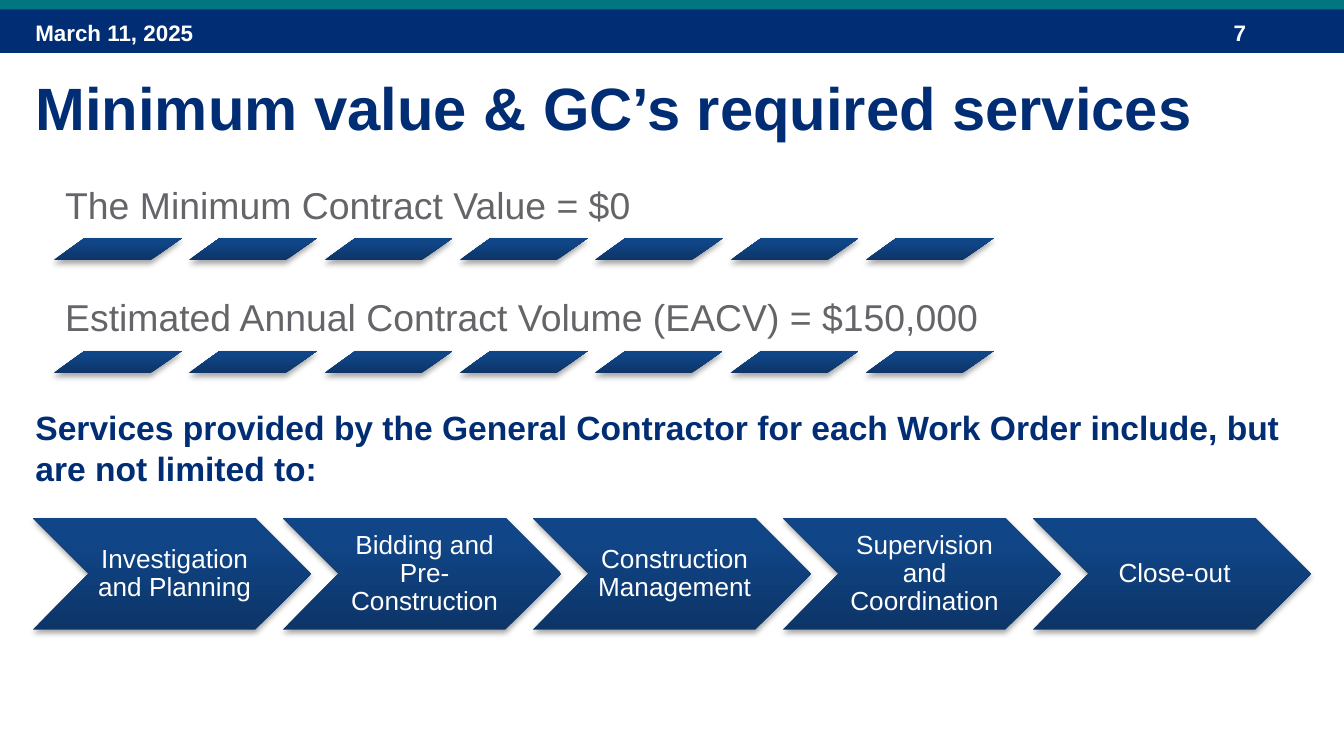
"""Build the slide on minimum value and the general contractor's required services."""
from copy import deepcopy
from dataclasses import dataclass
from typing import Any

import lxml.etree
import pptx
import pptx.dml.color
import pptx.enum.shapes
import pptx.enum.text
import pptx.oxml
import pptx.oxml.ns
import pptx.util

PX = 4572
SHAPES = pptx.enum.shapes.MSO_SHAPE
ANCHOR = pptx.enum.text.MSO_ANCHOR
ALIGN = pptx.enum.text.PP_ALIGN


@dataclass(frozen=True)
class Theme:
    font: str = "Arial"
    navy: str = "002D73"
    teal: str = "007681"
    grey: str = "646569"
    white: str = "FFFFFF"
    gradient: tuple = ((0, "0D3568"), (0.8, "104587"), (1, "0E458A"))
    title: int = 32
    value: int = 20
    intro: int = 18
    step: int = 14
    header: int = 12


@dataclass(frozen=True)
class Box:
    left: int
    top: int
    width: int
    height: int

    def emu(self) -> list[int]:
        return [v * PX for v in (self.left, self.top, self.width, self.height)]


@dataclass(frozen=True)
class ContractValue:
    text: str
    top: int


THEME = Theme()
VALUES = (
    ContractValue("The Minimum Contract Value = $0", 225),
    ContractValue("Estimated Annual Contract Volume (EACV) = $150,000", 393),
)
SERVICES = (
    "Investigation and Planning",
    "Bidding and Pre-Construction",
    "Construction Management",
    "Supervision and Coordination",
    "Close-out",
)
DASHES = 7
DASH_SPAN = 1208
SERVICE_PITCH = 372


def rgb(value: str) -> pptx.dml.color.RGBColor:
    return pptx.dml.color.RGBColor.from_string(value)


def write(target: Any, text: str, *, size: int, color: str, bold: bool = False,
          align: Any = ALIGN.LEFT, anchor: Any = ANCHOR.TOP, spacing: float = 1.0,
          insets: tuple = (20, 10, 20, 10), grow: bool = False) -> None:
    frame = target.text_frame
    frame.word_wrap = True
    frame.vertical_anchor = anchor
    auto = pptx.enum.text.MSO_AUTO_SIZE
    frame.auto_size = auto.SHAPE_TO_FIT_TEXT if grow else auto.NONE
    (frame.margin_left, frame.margin_top,
     frame.margin_right, frame.margin_bottom) = [v * PX for v in insets]
    frame.text = text
    paragraph = frame.paragraphs[0]
    paragraph.alignment = align
    paragraph.line_spacing = spacing
    font = paragraph.runs[0].font
    font.name = THEME.font
    font.size = pptx.util.Pt(size)
    font.bold = bold
    font.color.rgb = rgb(color)


def add_text(slide: Any, box: Box, text: str, **style: Any) -> None:
    write(slide.shapes.add_textbox(*box.emu()), text, **style)


def add_plain(slide: Any, kind: Any, box: Box) -> Any:
    shape = slide.shapes.add_shape(kind, *box.emu())
    shape.shadow.inherit = False
    shape.line.fill.background()
    return shape


def add_band(slide: Any, box: Box, color: str) -> None:
    band = add_plain(slide, SHAPES.RECTANGLE, box)
    band.fill.solid()
    band.fill.fore_color.rgb = rgb(color)


def add_raised(slide: Any, kind: Any, box: Box, adjustment: float) -> None:
    raised = add_plain(slide, kind, box)
    raised.adjustments[0] = adjustment
    raised.fill.gradient()
    raised.fill.gradient_angle = 90
    properties = raised._element.spPr
    stops = properties.find(".//" + pptx.oxml.ns.qn("a:gsLst"))
    stops.append(deepcopy(stops[-1]))
    for stop, (position, color) in zip(raised.fill.gradient_stops, THEME.gradient):
        stop.position = position
        stop.color.rgb = rgb(color)
    effects = properties.find(pptx.oxml.ns.qn("a:effectLst"))
    shadow = lxml.etree.SubElement(
        effects, pptx.oxml.ns.qn("a:outerShdw"), blurRad="39400", dist="22900",
        dir="5400000", rotWithShape="0")
    tint = lxml.etree.SubElement(shadow, pptx.oxml.ns.qn("a:srgbClr"), val="000000")
    lxml.etree.SubElement(tint, pptx.oxml.ns.qn("a:alpha"), val="35000")


def add_value(slide: Any, value: ContractValue) -> None:
    add_text(slide, Box(80, value.top, 1428, 130), value.text, size=THEME.value,
             color=THEME.grey, anchor=ANCHOR.BOTTOM, spacing=0.9,
             insets=(17, 17, 17, 17))
    for index in range(DASHES):
        left = 80 + round(index * DASH_SPAN / (DASHES - 1))
        add_raised(slide, SHAPES.PARALLELOGRAM,
                   Box(left, value.top + 129, 191, 33), 1.41)


def add_service(slide: Any, index: int, text: str) -> None:
    left = 49 + index * SERVICE_PITCH
    add_raised(slide, SHAPES.CHEVRON, Box(left, 771, 414, 166), 0.5)
    add_text(slide, Box(left + 83, 771, 248, 166), text, size=THEME.step,
             color=THEME.white, align=ALIGN.CENTER, anchor=ANCHOR.MIDDLE,
             spacing=0.9, insets=(12, 4, 4, 4))


def main() -> None:
    deck = pptx.Presentation()
    deck.slide_width, deck.slide_height = 2000 * PX, 1125 * PX
    slide = deck.slides.add_slide(deck.slide_layouts[5])

    add_band(slide, Box(0, 13, 2000, 66), THEME.navy)
    add_band(slide, Box(0, -4, 2000, 18), THEME.teal)
    header = dict(size=THEME.header, color=THEME.white, bold=True)
    add_text(slide, Box(33, 19, 466, 60), "March 11, 2025", **header)
    add_text(slide, Box(1816, 19, 150, 60), "7", **header)

    title = slide.shapes.title
    title.left, title.top, title.width, title.height = Box(33, 96, 1900, 128).emu()
    write(title, "Minimum value & GC’s required services", size=THEME.title,
          color=THEME.navy, bold=True, grow=True)

    for value in VALUES:
        add_value(slide, value)
    add_text(slide, Box(33, 596, 1918, 142),
             "Services provided by the General Contractor for each Work Order "
             "include, but are not limited to:",
             size=THEME.intro, color=THEME.navy, bold=True, grow=True)
    for index, service in enumerate(SERVICES):
        add_service(slide, index, service)

    deck.save("out.pptx")


if __name__ == "__main__":
    main()
